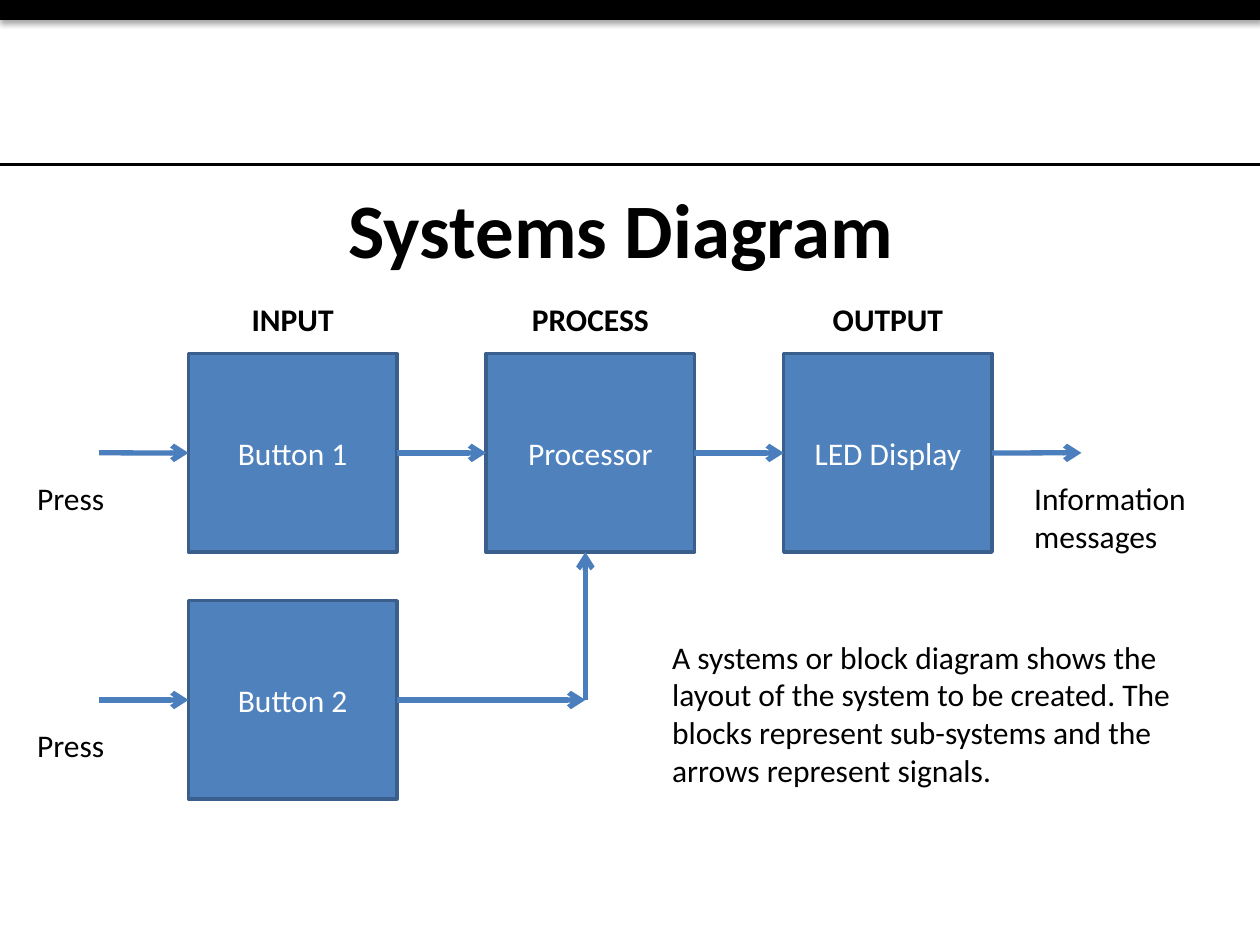
from lxml import etree
from pptx import Presentation
from pptx.dml.color import RGBColor
from pptx.enum.shapes import MSO_CONNECTOR, MSO_SHAPE
from pptx.enum.text import MSO_ANCHOR, MSO_AUTO_SIZE, PP_ALIGN
from pptx.oxml import parse_xml
from pptx.oxml.ns import nsdecls, qn
from pptx.util import Cm, Pt

STRAIGHT = MSO_CONNECTOR.STRAIGHT
RECTANGLE = MSO_SHAPE.RECTANGLE
TOP, MIDDLE = MSO_ANCHOR.TOP, MSO_ANCHOR.MIDDLE
GROW, FIXED = MSO_AUTO_SIZE.SHAPE_TO_FIT_TEXT, MSO_AUTO_SIZE.NONE
LEFT, CENTER = PP_ALIGN.LEFT, PP_ALIGN.CENTER

BLACK = RGBColor(0x00, 0x00, 0x00)
WHITE = RGBColor(0xFF, 0xFF, 0xFF)
BLOCK_FILL = RGBColor(0x4F, 0x81, 0xBD)
BLOCK_EDGE = RGBColor(0x3A, 0x5F, 0x8C)
SIGNAL = RGBColor(0x4B, 0x7E, 0xBC)

# Lengths in centimetres
PAGE_WIDTH, PAGE_HEIGHT = 25.4, 19.05
BLOCK_WIDTH, BLOCK_HEIGHT = 4.2, 4
FIRST_LEFT, FIRST_TOP = 3.8, 7.13
COLUMN_STEP, ROW_STEP = 6, 4.98
SIGNAL_LENGTH = COLUMN_STEP - BLOCK_WIDTH
LEFT_SIDE, RIGHT_SIDE = 1, 3

BAR_SHADOW = (
    f'<a:effectLst {nsdecls("a")}>'
    '<a:outerShdw blurRad="40000" dist="23000" dir="5400000" rotWithShape="0">'
    '<a:srgbClr val="000000"><a:alpha val="35000"/></a:srgbClr>'
    '</a:outerShdw></a:effectLst>'
)


def write(shape, text, *, size=18, color=BLACK, bold=False, align=LEFT,
          anchor=TOP, fit=FIXED):
    frame = shape.text_frame
    frame.word_wrap = True
    frame.auto_size = fit
    frame.vertical_anchor = anchor
    para = frame.paragraphs[0]
    para.alignment = align
    span = para.add_run()
    span.text = text
    span.font.name = "Calibri"
    span.font.size = Pt(size)
    span.font.bold = bold
    span.font.color.rgb = color


class DiagramPage:
    """Holds the diagram style and the slide being drawn."""

    def __init__(self, deck):
        self.page = deck.slides.add_slide(deck.slide_layouts[5])
        self.shapes = self.page.shapes

    def title(self, text, left, top, width, height):
        box = self.shapes.title
        box.left, box.top = Cm(left), Cm(top)
        box.width, box.height = Cm(width), Cm(height)
        write(box, text, size=44, bold=True, align=CENTER)

    def rectangle(self, left, top, width, height, fill, edge, weight):
        box = self.shapes.add_shape(RECTANGLE, Cm(left), Cm(top), Cm(width), Cm(height))
        box.shadow.inherit = False
        box.fill.solid()
        box.fill.fore_color.rgb = fill
        box.line.color.rgb = edge
        box.line.width = Pt(weight)
        return box

    def header_bar(self, height):
        bar = self.rectangle(0, 0, PAGE_WIDTH, height, BLACK, BLACK, 0.75)
        properties = bar._element.spPr
        properties.replace(properties.find(qn("a:effectLst")), parse_xml(BAR_SHADOW))

    def block(self, text, column, row):
        box = self.rectangle(FIRST_LEFT + column * COLUMN_STEP,
                             FIRST_TOP + row * ROW_STEP,
                             BLOCK_WIDTH, BLOCK_HEIGHT, BLOCK_FILL, BLOCK_EDGE, 2)
        write(box, text, color=WHITE, align=CENTER, anchor=MIDDLE)
        return box

    def label(self, text, left, top, width, height=1.02, **style):
        box = self.shapes.add_textbox(Cm(left), Cm(top), Cm(width), Cm(height))
        write(box, text, fit=GROW, **style)

    def line(self, start, end, color, weight):
        line = self.shapes.add_connector(STRAIGHT, *map(Cm, start + end))
        line.line.color.rgb = color
        line.line.width = Pt(weight)
        etree.SubElement(line._element.spPr, qn("a:effectLst"))
        return line

    def signal(self, start, end, source=None, target=None):
        """Draw an arrow, joined to the right of source and the left of target."""
        arrow = self.line(start, end, SIGNAL, 3)
        etree.SubElement(arrow.line._get_or_add_ln(), qn("a:tailEnd"), type="arrow")
        if source is not None:
            arrow.begin_connect(source, RIGHT_SIDE)
        if target is not None:
            arrow.end_connect(target, LEFT_SIDE)


def main():
    deck = Presentation()
    deck.slide_width, deck.slide_height = Cm(PAGE_WIDTH), Cm(PAGE_HEIGHT)
    diagram = DiagramPage(deck)

    diagram.header_bar(0.39)
    diagram.line((0, 3.32), (PAGE_WIDTH, 3.32), BLACK, 1.5)
    diagram.title("Systems Diagram", 1.09, 3.53, 22.86, 1.6)

    stages = [diagram.block(text, column, 0)
              for column, text in enumerate(("Button 1", "Processor", "LED Display"))]
    second_button = diagram.block("Button 2", 0, 1)

    upper = FIRST_TOP + BLOCK_HEIGHT / 2
    lower = upper + ROW_STEP
    chain = [None, *stages, None]
    for step, (source, target) in enumerate(zip(chain, chain[1:])):
        end = FIRST_LEFT + step * COLUMN_STEP
        diagram.signal((end - SIGNAL_LENGTH, upper), (end, upper), source, target)

    diagram.signal((FIRST_LEFT - SIGNAL_LENGTH, lower), (FIRST_LEFT, lower),
                   target=second_button)
    corner = (11.8, lower)
    diagram.signal((FIRST_LEFT + BLOCK_WIDTH, lower), corner, source=second_button)
    diagram.signal(corner, (corner[0], FIRST_TOP + BLOCK_HEIGHT))

    headings = (("INPUT", 2.2), ("PROCESS", 3), ("OUTPUT", 3.4))
    for column, (text, width) in enumerate(headings):
        center = FIRST_LEFT + column * COLUMN_STEP + BLOCK_WIDTH / 2
        diagram.label(text, center - width / 2, 5.93, width, bold=True, align=CENTER)

    note_top = upper + 0.4
    diagram.label("Press", 0.5, note_top, 2.9)
    diagram.label("Press", 0.5, note_top + ROW_STEP, 3.6)
    diagram.label("Information messages", 20.6, note_top, 4.8, 1.8)
    diagram.label("A systems or block diagram shows the layout of the system to be "
                  "created. The blocks represent sub-systems and the arrows "
                  "represent signals.", 13.3, 12.73, 11, 3.33)

    deck.save("out.pptx")


if __name__ == "__main__":
    main()
